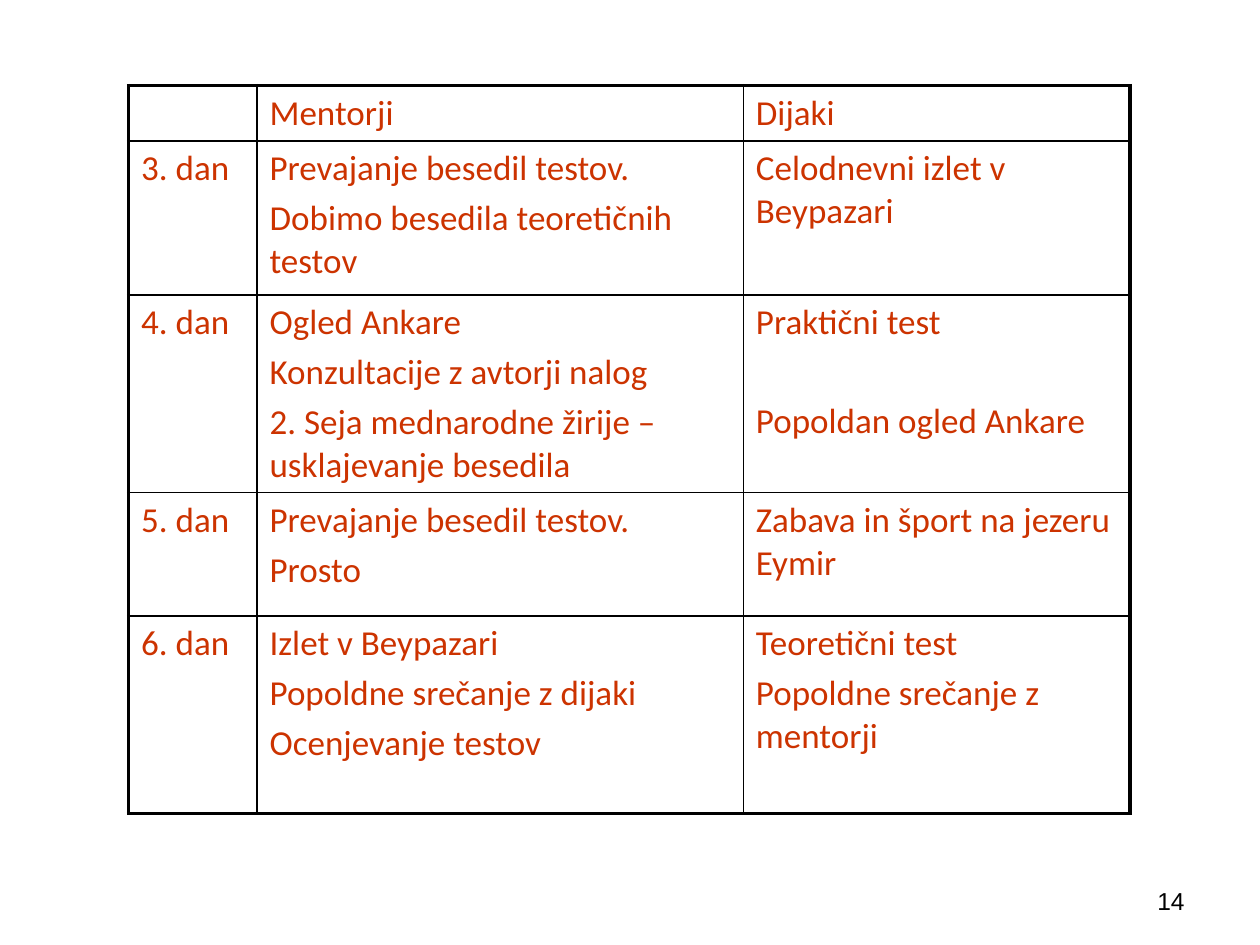
from pptx import Presentation
from pptx.dml.color import RGBColor
from pptx.enum.text import MSO_ANCHOR, PP_ALIGN
from pptx.oxml.ns import qn
from pptx.util import Inches, Pt
from lxml import etree

RIGHT = PP_ALIGN.RIGHT
MIDDLE = MSO_ANCHOR.MIDDLE

RUST = RGBColor(0xCC, 0x33, 0x00)
BLACK = RGBColor(0x00, 0x00, 0x00)

THIN, THICK = 1, 2.25
PARA_GAP, WIDE_GAP = 4, 32  # points before a following paragraph

COLS = [1.02, 3.86, 3.07]
ROWS = [0.44, 1.22, 1.57, 0.98, 1.57]

# Each cell is a list of paragraphs
SCHEDULE = [
    [[], ["Mentorji"], ["Dijaki"]],
    [["3. dan"],
     ["Prevajanje besedil testov.", "Dobimo besedila teoretičnih testov"],
     ["Celodnevni izlet v Beypazari"]],
    [["4. dan"],
     ["Ogled Ankare", "Konzultacije z avtorji nalog",
      "2. Seja mednarodne žirije – usklajevanje besedila"],
     ["Praktični test", "Popoldan ogled Ankare"]],
    [["5. dan"],
     ["Prevajanje besedil testov.", "Prosto"],
     ["Zabava in šport na jezeru Eymir"]],
    [["6. dan"],
     ["Izlet v Beypazari", "Popoldne srečanje z dijaki", "Ocenjevanje testov"],
     ["Teoretični test", "Popoldne srečanje z mentorji"]],
]
WIDE_GAP_CELL = (2, 2)  # afternoon entry stands one line lower


def add_run(p, text, font, size, color):
    r = p.add_run()
    r.text = text
    r.font.name = font
    r.font.size = Pt(size)
    r.font.color.rgb = color


def set_border(cell, side, width):
    tc_pr = cell._tc.get_or_add_tcPr()
    ln = etree.SubElement(tc_pr, qn(f"a:ln{side}"), w=str(Pt(width)))
    fill = etree.SubElement(ln, qn("a:solidFill"))
    etree.SubElement(fill, qn("a:srgbClr"), val=str(BLACK))


def fill_cell(cell, lines, gap):
    tf = cell.text_frame
    for i, line in enumerate(lines):
        p = tf.add_paragraph() if i else tf.paragraphs[0]
        if i:
            p.space_before = Pt(gap)
        add_run(p, line, "Calibri", 20, RUST)


def add_schedule(s):
    n_rows, n_cols = len(ROWS), len(COLS)
    table = s.shapes.add_table(
        n_rows, n_cols, Inches(1.02), Inches(0.68),
        Inches(sum(COLS)), Inches(sum(ROWS))).table
    table.first_row = table.horz_banding = False
    for col, width in zip(table.columns, COLS):
        col.width = Inches(width)
    for row, height in zip(table.rows, ROWS):
        row.height = Inches(height)

    for r, row in enumerate(SCHEDULE):
        for c, lines in enumerate(row):
            cell = table.cell(r, c)
            gap = WIDE_GAP if (r, c) == WIDE_GAP_CELL else PARA_GAP
            fill_cell(cell, lines, gap)
            # Thick frame outside, thin rules inside
            outer = {"L": c == 0, "R": c == n_cols - 1,
                     "T": r == 0, "B": r == n_rows - 1}
            for side, is_outer in outer.items():
                set_border(cell, side, THICK if is_outer else THIN)
            cell.fill.background()


def add_page_number(s, number):
    box = s.shapes.add_textbox(Inches(7.17), Inches(6.95),
                               Inches(2.33), Inches(0.4))
    tf = box.text_frame
    tf.word_wrap = True
    tf.vertical_anchor = MIDDLE
    p = tf.paragraphs[0]
    p.alignment = RIGHT
    add_run(p, number, "Arial", 14, BLACK)


def main():
    prs = Presentation()
    prs.slide_width, prs.slide_height = Inches(10), Inches(7.5)
    s = prs.slides.add_slide(prs.slide_layouts[6])
    add_page_number(s, "14")
    add_schedule(s)
    prs.save("out.pptx")


if __name__ == "__main__":
    main()
